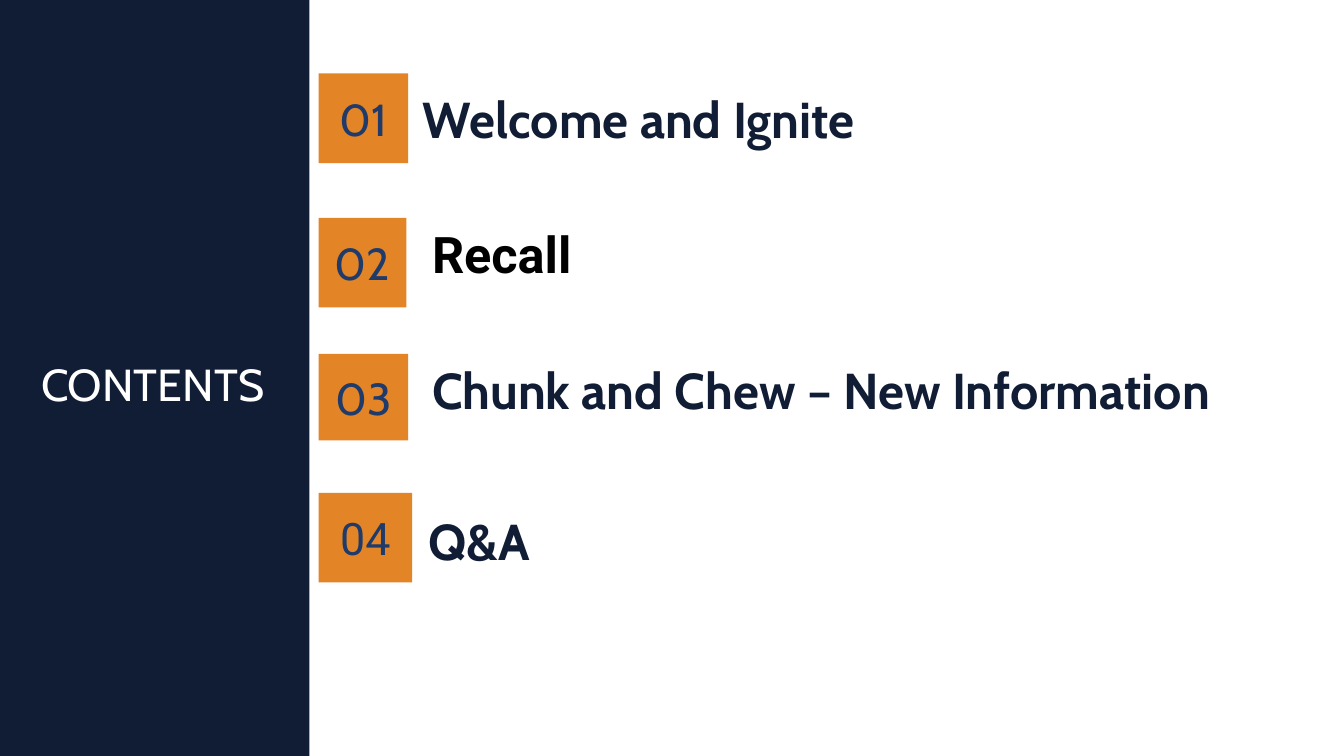
"""Build a contents slide with a dark sidebar and four numbered agenda items."""
from dataclasses import dataclass

from pptx import Presentation
from pptx.dml.color import RGBColor
from pptx.enum import shapes, text
from pptx.shapes.autoshape import Shape
from pptx.slide import Slide
from pptx.util import Cm, Pt

COLORS = {
    "navy": "101D35",
    "blue": "203B6A",
    "orange": "E38526",
    "white": "FFFFFF",
    "black": "000000",
}


@dataclass(frozen=True)
class Box:
    left: float
    top: float
    width: float
    height: float

    def lengths(self) -> tuple[Cm, Cm, Cm, Cm]:
        return Cm(self.left), Cm(self.top), Cm(self.width), Cm(self.height)


@dataclass(frozen=True)
class Style:
    size: int
    color: str
    font: str = "Cabin"
    bold: bool = False
    align: text.PP_ALIGN = text.PP_ALIGN.LEFT


@dataclass(frozen=True)
class AgendaItem:
    title: str
    badge: Box
    label: Box
    badge_font: str = "Cabin"
    label_font: str = "Cabin"
    label_color: str = "navy"


BADGE_LEFT = 8.03
SIDEBAR = Box(0, 0, 7.8, 19.05)
HEADING = Box(0, 8.86, 7.7, 1.63)
AGENDA = [
    AgendaItem("Welcome and Ignite", Box(BADGE_LEFT, 1.85, 2.26, 2.26),
               Box(10.41, 1.85, 22.17, 2.26)),
    AgendaItem("Recall", Box(BADGE_LEFT, 5.49, 2.21, 2.26),
               Box(10.64, 5.26, 21.84, 2.26),
               label_font="Roboto", label_color="black"),
    AgendaItem("Chunk and Chew – New Information", Box(BADGE_LEFT, 8.92, 2.26, 2.18),
               Box(10.64, 8.71, 22.17, 2.18)),
    AgendaItem("Q&A", Box(BADGE_LEFT, 12.42, 2.36, 2.26),
               Box(10.54, 12.57, 23.32, 2.11), badge_font="Roboto"),
]


def rgb(name: str) -> RGBColor:
    return RGBColor.from_string(COLORS[name])


def write(shape: Shape, words: str, style: Style) -> None:
    frame = shape.text_frame
    frame.text = words
    frame.word_wrap = True
    frame.vertical_anchor = text.MSO_ANCHOR.MIDDLE
    paragraph = frame.paragraphs[0]
    paragraph.alignment = style.align
    font = paragraph.runs[0].font
    font.name = style.font
    font.size = Pt(style.size)
    font.bold = style.bold
    font.color.rgb = rgb(style.color)


def add_rectangle(slide: Slide, box: Box, color: str) -> Shape:
    shape = slide.shapes.add_shape(shapes.MSO_SHAPE.RECTANGLE, *box.lengths())
    shape.shadow.inherit = False
    shape.fill.solid()
    shape.fill.fore_color.rgb = rgb(color)
    shape.line.fill.background()
    return shape


def add_text(slide: Slide, box: Box, words: str, style: Style) -> None:
    write(slide.shapes.add_textbox(*box.lengths()), words, style)


def add_agenda_item(slide: Slide, number: int, item: AgendaItem) -> None:
    badge = add_rectangle(slide, item.badge, "orange")
    write(badge, f"{number:02d}",
          Style(32, "blue", item.badge_font, align=text.PP_ALIGN.CENTER))
    add_text(slide, item.label, item.title,
             Style(36, item.label_color, item.label_font, bold=True))


def main() -> None:
    presentation = Presentation()
    presentation.slide_width = Cm(33.87)
    presentation.slide_height = Cm(19.05)
    slide = presentation.slides.add_slide(presentation.slide_layouts[6])
    add_rectangle(slide, SIDEBAR, "navy")
    add_text(slide, HEADING, "CONTENTS",
             Style(32, "white", align=text.PP_ALIGN.CENTER))
    for number, item in enumerate(AGENDA, start=1):
        add_agenda_item(slide, number, item)
    presentation.save("out.pptx")


if __name__ == "__main__":
    main()
